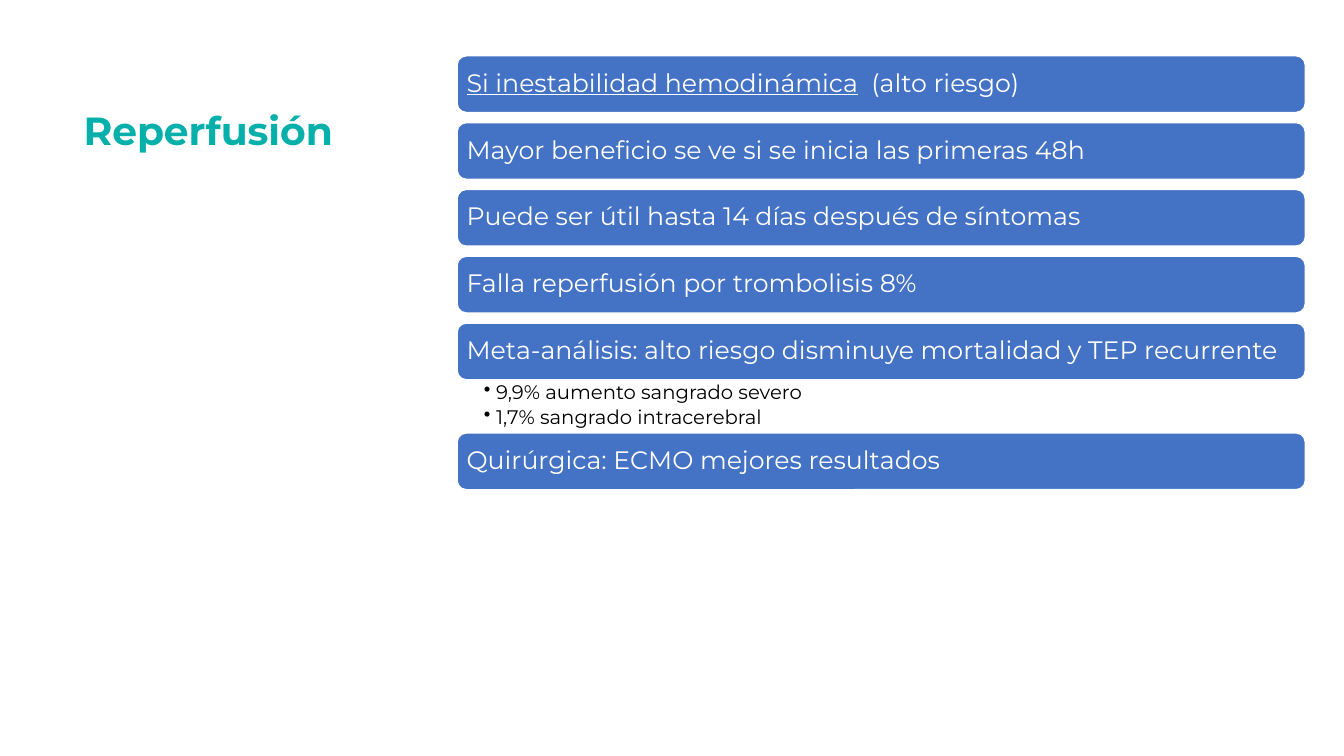
from dataclasses import dataclass

from lxml.etree import SubElement
from pptx import Presentation
from pptx.dml.color import RGBColor
from pptx.enum.shapes import MSO_SHAPE
from pptx.enum.text import MSO_ANCHOR, PP_ALIGN
from pptx.oxml.ns import qn
from pptx.shapes.base import BaseShape
from pptx.slide import Slide
from pptx.util import Inches, Pt

TEAL = RGBColor(0x06, 0xB0, 0xAA)
BLUE = RGBColor(0x44, 0x72, 0xC4)
WHITE = RGBColor(0xFF, 0xFF, 0xFF)
BLACK = RGBColor(0x00, 0x00, 0x00)
FONT = "Montserrat"
LEFT, WIDTH = 4.53, 8.42
TOP, HIGH, GAP = 0.55, 0.57, 0.093
LIST_HIGH = 0.52


@dataclass(frozen=True)
class Topic:
    text: str
    under: str = ""
    points: tuple[str, ...] = ()


TOPICS = (
    Topic("  (alto riesgo)", under="Si inestabilidad hemodinámica"),
    Topic("Mayor beneficio se ve si se inicia las primeras 48h"),
    Topic("Puede ser útil hasta 14 días después de síntomas"),
    Topic("Falla reperfusión por trombolisis 8%"),
    Topic(
        "Meta-análisis: alto riesgo disminuye mortalidad y TEP recurrente",
        points=("9,9% aumento sangrado severo", "1,7% sangrado intracerebral"),
    ),
    Topic("Quirúrgica: ECMO mejores resultados"),
)


def write(
    shape: BaseShape,
    *lines: str,
    size: float,
    color: RGBColor,
    pad: tuple[float, float, float, float],
    under: str = "",
    bold: bool = False,
    bullet: bool = False,
    anchor: MSO_ANCHOR = MSO_ANCHOR.MIDDLE,
) -> None:
    frame = shape.text_frame
    frame.word_wrap = True
    frame.vertical_anchor = anchor
    frame.margin_left, frame.margin_top, frame.margin_right, frame.margin_bottom = map(
        Inches, pad
    )
    for index, line in enumerate(lines):
        para = frame.add_paragraph() if index else frame.paragraphs[0]
        para.alignment = PP_ALIGN.LEFT
        para.line_spacing = 0.9
        if bullet:
            para.level = 1
            para.space_after = Pt(3)
            props = para._p.get_or_add_pPr()
            props.set("marL", str(Inches(0.12)))
            props.set("indent", str(-Inches(0.12)))
            SubElement(props, qn("a:buChar")).set("char", "•")
        for part, lined in ((under, True), (line, False)):
            if part:
                run = para.add_run()
                run.text = part
                run.font.name = FONT
                run.font.size = Pt(size)
                run.font.bold = bold
                run.font.underline = lined
                run.font.color.rgb = color


def add_box(slide: Slide, left: float, top: float, width: float, high: float) -> BaseShape:
    return slide.shapes.add_textbox(
        Inches(left), Inches(top), Inches(width), Inches(high)
    )


def add_bar(slide: Slide, topic: Topic, top: float) -> None:
    bar = slide.shapes.add_shape(
        MSO_SHAPE.ROUNDED_RECTANGLE,
        Inches(LEFT), Inches(top), Inches(WIDTH), Inches(HIGH),
    )
    bar.shadow.inherit = False
    bar.fill.solid()
    bar.fill.fore_color.rgb = BLUE
    bar.line.color.rgb = WHITE
    bar.line.width = Pt(1.5)
    write(bar, topic.text, under=topic.under, size=18, color=WHITE, pad=(0.07,) * 4)


def main() -> None:
    deck = Presentation()
    deck.slide_width, deck.slide_height = Inches(13.33), Inches(7.5)
    slide = deck.slides.add_slide(deck.slide_layouts[6])

    title = add_box(slide, 0.73, 0.78, 11.88, 1.07)
    write(title, "Reperfusión", size=28, color=TEAL, bold=True, pad=(0.1, 0.05, 0.1, 0.05))

    top = TOP
    for topic in TOPICS:
        add_bar(slide, topic, top)
        top += HIGH
        if topic.points:
            box = add_box(slide, LEFT, top, WIDTH, LIST_HIGH)
            write(
                box, *topic.points, size=14, color=BLACK, bullet=True,
                pad=(0.27, 0.02, 0.11, 0.02), anchor=MSO_ANCHOR.TOP,
            )
            top += LIST_HIGH
        else:
            top += GAP

    deck.save("out.pptx")


if __name__ == "__main__":
    main()
